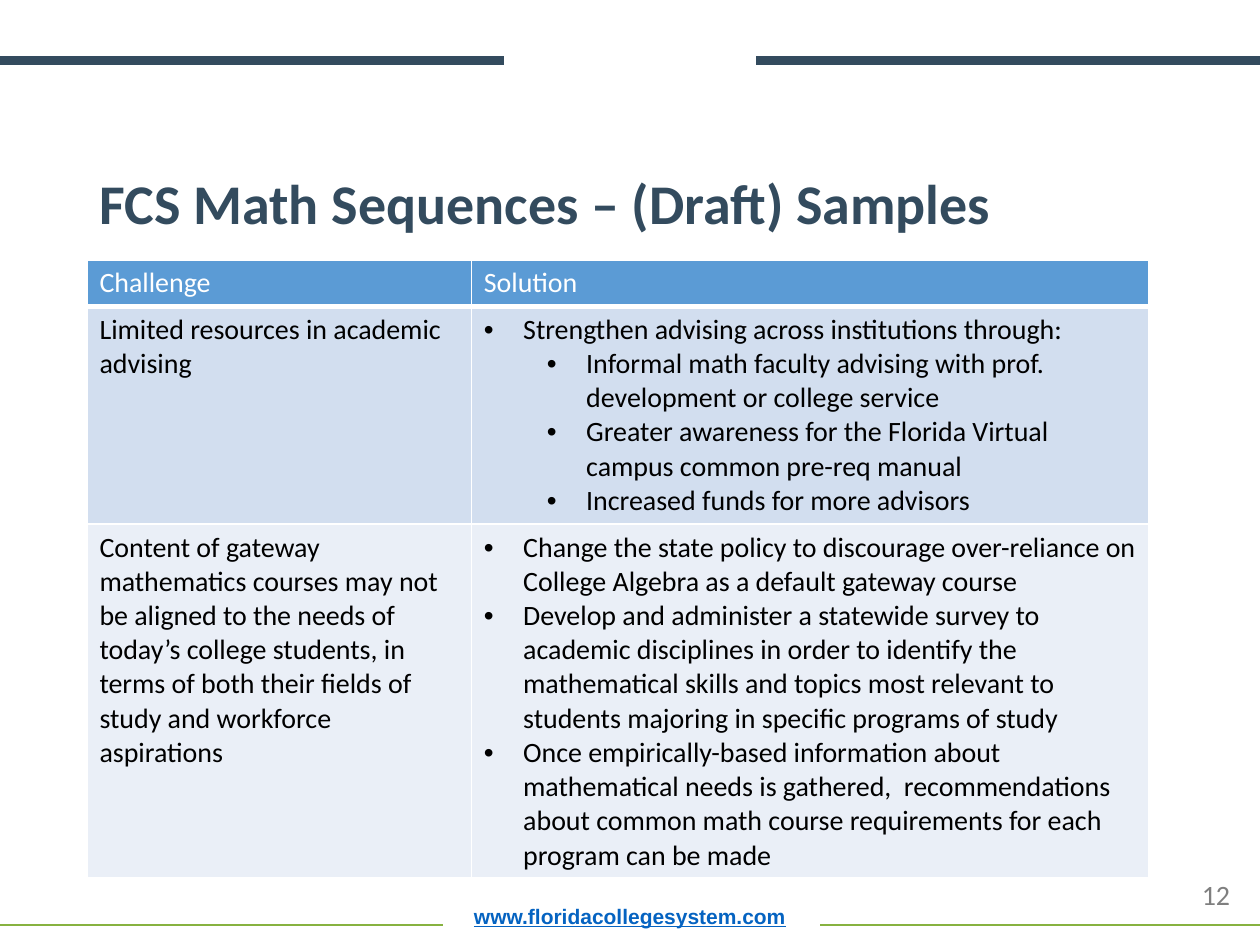
from lxml import etree
from pptx import Presentation
from pptx import util as u
from pptx.dml.color import RGBColor
from pptx.enum import shapes, text
from pptx.oxml import ns

COLOURS = {
    "navy": "334B5E", "green": "87B240", "link": "0563C1", "grey": "7F7F7F",
    "header": "5B9BD5", "band_dark": "D2DEEF", "band_light": "EAEFF7",
    "white": "FFFFFF", "black": "000000",
}
LEFT = 49.7
BULLET_INDENT = 22.5
LEVEL_STEP = 36

# Each solution is a list of (level, wording) bullets.
CHALLENGES = [
    ("Limited resources in academic advising", [
        (0, "Strengthen advising across institutions through:"),
        (1, "Informal math faculty advising with prof. development or college service"),
        (1, "Greater awareness for the Florida Virtual campus common pre-req manual"),
        (1, "Increased funds for more advisors"),
    ]),
    ("Content of gateway mathematics courses may not be aligned to the needs of "
     "today’s college students, in terms of both their fields of study and "
     "workforce aspirations", [
        (0, "Change the state policy to discourage over-reliance on College Algebra "
            "as a default gateway course"),
        (0, "Develop and administer a statewide survey to academic disciplines in "
            "order to identify the mathematical skills and topics most relevant to "
            "students majoring in specific programs of study"),
        (0, "Once empirically-based information about mathematical needs is gathered, "
            " recommendations about common math course requirements for each "
            "program can be made"),
    ]),
]


def colour(name):
    return RGBColor.from_string(COLOURS[name])


class SlideBuilder:
    """Holds the text style and the slide being filled."""

    def __init__(self, slide, font="Calibri", size=16):
        self.slide = slide
        self.font = font
        self.size = size

    def format(self, paragraph, colour_name, size=None, font=None, bold=False, underline=False):
        for run in paragraph.runs:
            run.font.name = font or self.font
            run.font.size = u.Pt(size or self.size)
            run.font.bold = bold
            run.font.underline = underline
            run.font.color.rgb = colour(colour_name)

    def text_box(self, box, wording, colour_name, anchor=text.MSO_ANCHOR.BOTTOM,
                 align=text.PP_ALIGN.LEFT, line_spacing=0.9, **style):
        frame = self.slide.shapes.add_textbox(*map(u.Pt, box)).text_frame
        frame.word_wrap = True
        frame.vertical_anchor = anchor
        paragraph = frame.paragraphs[0]
        paragraph.text = wording
        paragraph.alignment = align
        paragraph.line_spacing = line_spacing
        self.format(paragraph, colour_name, **style)

    def rule(self, start, end, y, colour_name, width):
        line = self.slide.shapes.add_connector(
            shapes.MSO_CONNECTOR.STRAIGHT, u.Pt(start), u.Pt(y), u.Pt(end), u.Pt(y))
        line.line.color.rgb = colour(colour_name)
        line.line.width = u.Pt(width)
        etree.SubElement(line._element.spPr, ns.qn("a:effectLst"))

    def bullet(self, paragraph, level):
        paragraph.level = level
        properties = paragraph._p.get_or_add_pPr()
        properties.set("marL", str(u.Pt(BULLET_INDENT + level * LEVEL_STEP)))
        properties.set("indent", str(-u.Pt(BULLET_INDENT)))
        etree.SubElement(properties, ns.qn("a:buFont"), typeface="Arial")
        etree.SubElement(properties, ns.qn("a:buChar"), char="•")

    def cell(self, cell, content, fill, colour_name="black", bottom=1):
        """Fill a cell with plain wording or with a list of bullets."""
        properties = cell._tc.get_or_add_tcPr()
        for side, width in (("L", 1), ("R", 1), ("T", 1), ("B", bottom)):
            border = etree.SubElement(properties, ns.qn(f"a:ln{side}"), w=str(u.Pt(width)))
            solid = etree.SubElement(border, ns.qn("a:solidFill"))
            etree.SubElement(solid, ns.qn("a:srgbClr"), val=COLOURS["white"])
        cell.fill.solid()
        cell.fill.fore_color.rgb = colour(fill)
        bullets = [(None, content)] if isinstance(content, str) else content
        cell.text_frame.text = "\n".join(wording for _, wording in bullets)
        for paragraph, (level, _) in zip(cell.text_frame.paragraphs, bullets):
            if level is not None:
                self.bullet(paragraph, level)
            self.format(paragraph, colour_name)

    def table(self, left, top, widths, heights, header, rows):
        table = self.slide.shapes.add_table(
            len(heights), len(widths), u.Pt(left), u.Pt(top),
            u.Pt(sum(widths)), u.Pt(sum(heights))).table
        for column, width in zip(table.columns, widths):
            column.width = u.Pt(width)
        for row, height in zip(table.rows, heights):
            row.height = u.Pt(height)
        for index, wording in enumerate(header):
            self.cell(table.cell(0, index), wording, "header", "white", bottom=3)
        for number, row in enumerate(rows, start=1):
            fill = "band_dark" if number % 2 else "band_light"
            for index, content in enumerate(row):
                self.cell(table.cell(number, index), content, fill)


def main():
    presentation = Presentation()
    presentation.slide_width, presentation.slide_height = u.Pt(720), u.Pt(540)
    builder = SlideBuilder(presentation.slides.add_slide(presentation.slide_layouts[6]))

    builder.text_box((LEFT, 504, 620.6, 30.2), "www.floridacollegesystem.com", "link",
                     align=text.PP_ALIGN.CENTER, size=12, font="Arial",
                     bold=True, underline=True)
    for start, end in ((0, 288), (432, 720)):
        builder.rule(start, end, 34.6, "navy", 5)
    for start, end in ((0, 253.4), (468.7, 720)):
        builder.rule(start, end, 528.5, "green", 1.25)
    builder.text_box((679.7, 498.2, 37.4, 26.6), "12", "grey",
                     anchor=text.MSO_ANCHOR.TOP, line_spacing=1)
    builder.text_box((LEFT, 76.3, 620.6, 62.6), "FCS Math Sequences – (Draft) Samples",
                     "navy", size=32, bold=True)
    builder.table(LEFT, 148.5, (219.6, 387.4), (26.5, 124.5, 202),
                  ("Challenge", "Solution"), CHALLENGES)

    presentation.save("out.pptx")


if __name__ == "__main__":
    main()
